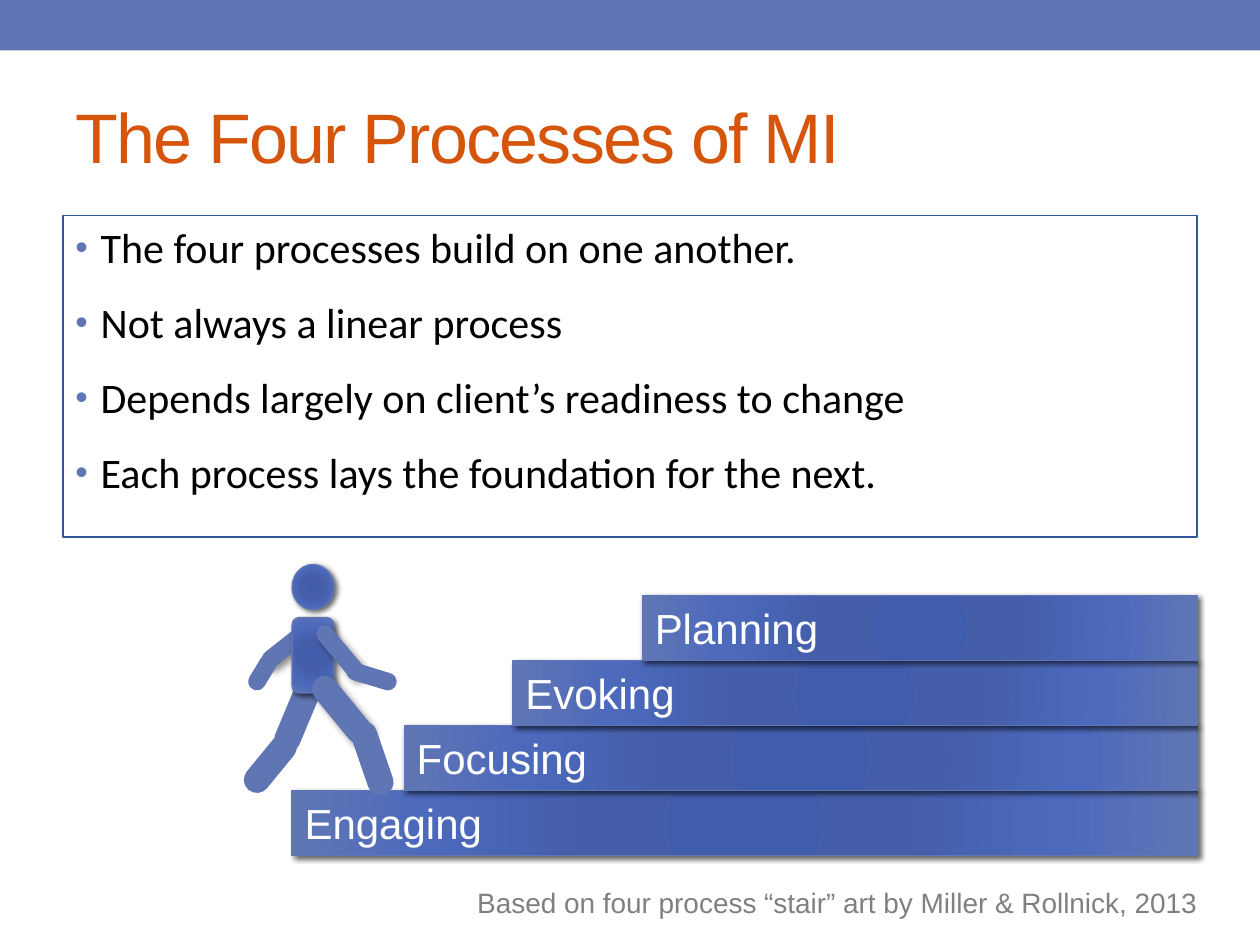
from lxml import etree
from pptx import Presentation
from pptx.dml.color import RGBColor
from pptx.enum import shapes, text
from pptx.oxml import parse_xml
from pptx.oxml.ns import qn
from pptx.util import Cm, Pt

COLORS = {
    "blue": "6076B4", "title": "D6550D", "border": "2F5897", "black": "000000",
    "white": "FFFFFF", "gray": "808080",
}
GRADIENT = {0: "405CAC", 34: "445EA9", 70: "4C69BC", 100: "6076B4"}
NAMESPACE = "http://schemas.openxmlformats.org/drawingml/2006/main"
SOFT_SHADOW = (60, 3, 2)
LIMB_SHADOW = (43, 4, 3)


class SlideBuilder:
    def __init__(self, slide):
        self.slide = slide

    def color(self, name):
        return RGBColor.from_string(COLORS[name])

    def add_shadow(self, effects, alpha, blur, distance):
        shadow = etree.SubElement(
            effects, qn("a:outerShdw"), blurRad=str(Pt(blur)), dist=str(Pt(distance)),
            dir="2700000", algn="tl", rotWithShape="0")
        shade = etree.SubElement(shadow, qn("a:srgbClr"), val=COLORS["black"])
        etree.SubElement(shade, qn("a:alpha"), val=str(alpha * 1000))

    def add_text(self, shape, lines, size, color, font="Arial", align=text.PP_ALIGN.LEFT,
                 anchor=text.MSO_ANCHOR.MIDDLE):
        frame = shape.text_frame
        frame.word_wrap = True
        frame.vertical_anchor = anchor
        frame.text = "\n".join(lines)
        for paragraph in frame.paragraphs:
            paragraph.alignment = align
            paragraph.font.size = Pt(size)
            paragraph.font.name = font
            paragraph.font.color.rgb = self.color(color)
        return frame

    def text_box(self, box, lines, size, color, **options):
        shape = self.slide.shapes.add_textbox(*map(Cm, box))
        self.add_text(shape, lines, size, color, **options)
        return shape

    def bar(self, box, color):
        shape = self.slide.shapes.add_shape(shapes.MSO_SHAPE.RECTANGLE, *map(Cm, box))
        shape.shadow.inherit = False
        shape.fill.solid()
        shape.fill.fore_color.rgb = self.color(color)
        shape.line.fill.background()

    def bullets(self, box, lines):
        shape = self.text_box(box, lines, 24, "black", font="Calibri",
                              anchor=text.MSO_ANCHOR.TOP)
        shape.line.color.rgb = self.color("border")
        shape.line.width = Pt(0.75)
        for paragraph in shape.text_frame.paragraphs:
            paragraph.space_before = Pt(4)
            paragraph.space_after = Pt(10)
            properties = paragraph._p.get_or_add_pPr()
            properties.set("marL", str(Cm(0.51)))
            properties.set("indent", str(Cm(-0.51)))
            bullet = parse_xml(
                f'<a:pPr xmlns:a="{NAMESPACE}"><a:buClr><a:srgbClr val="{COLORS["blue"]}"/>'
                '</a:buClr><a:buSzPct val="85000"/><a:buFont typeface="Arial"/>'
                '<a:buChar char="•"/></a:pPr>')
            position = properties.index(properties.find(qn("a:defRPr")))
            properties[position:position] = list(bullet)

    def glossy_shape(self, kind, box):
        shape = self.slide.shapes.add_shape(kind, *map(Cm, box))
        shape.line.color.rgb = self.color("blue")
        shape.line.width = Pt(0.75)
        shape.shadow.inherit = False
        shape.fill.background()
        properties = shape._element.spPr
        stops = "".join(f'<a:gs pos="{position * 1000}"><a:srgbClr val="{value}"/></a:gs>'
                        for position, value in GRADIENT.items())
        gradient = parse_xml(
            f'<a:gradFill xmlns:a="{NAMESPACE}" rotWithShape="1"><a:gsLst>{stops}</a:gsLst>'
            '<a:path path="circle"><a:fillToRect l="100000" t="100000" r="100000" b="100000"/>'
            '</a:path></a:gradFill>')
        properties.replace(properties.find(qn("a:noFill")), gradient)
        self.add_shadow(properties.find(qn("a:effectLst")), *SOFT_SHADOW)
        return shape

    def limb(self, points, width, shadow=None):
        connector = self.slide.shapes.add_connector(
            shapes.MSO_CONNECTOR.STRAIGHT, *map(Cm, points))
        connector.line.color.rgb = self.color("blue")
        connector.line.width = Pt(width)
        properties = connector._element.spPr
        properties.find(qn("a:ln")).set("cap", "rnd")
        effects = etree.SubElement(properties, qn("a:effectLst"))
        if shadow:
            self.add_shadow(effects, *shadow)


def main():
    presentation = Presentation()
    presentation.slide_width = Cm(25.4)
    presentation.slide_height = Cm(19.05)
    slide = presentation.slides.add_slide(presentation.slide_layouts[6])
    builder = SlideBuilder(slide)

    builder.bar((0, 0, 25.4, 1.02), "blue")
    title = builder.text_box((1.27, 1.37, 22.86, 2.74), ["The Four Processes of MI"], 40, "title")
    title.text_frame.paragraphs[0].runs[0].font._element.set("spc", "-100")
    builder.bullets((1.27, 4.35, 22.86, 6.48), [
        "The four processes build on one another.",
        "Not always a linear process",
        "Depends largely on client’s readiness to change",
        "Each process lays the foundation for the next.",
    ])

    stairs_right, bottom_step_top, rise = 24.13, 15.93, 1.31
    steps = [("Engaging", 5.89), ("Focusing", 8.15), ("Evoking", 10.34), ("Planning", 12.95)]
    for index, (name, left) in enumerate(steps):
        step = builder.glossy_shape(
            shapes.MSO_SHAPE.RECTANGLE,
            (left, bottom_step_top - index * rise, stairs_right - left, 1.32))
        builder.add_text(step, [name], 24, "white")

    builder.text_box((8.51, 17.73, 15.88, 0.94),
                     ["Based on four process “stair” art by Miller & Rollnick, 2013"],
                     16, "gray", align=text.PP_ALIGN.RIGHT, anchor=text.MSO_ANCHOR.TOP)

    arm, leg = 10, 15
    builder.limb((6.3, 13.69, 5.79, 14.91), leg)
    builder.limb((5.46, 13.28, 6.3, 12.62), arm, LIMB_SHADOW)
    builder.glossy_shape(shapes.MSO_SHAPE.OVAL, (5.89, 11.38, 0.84, 0.91))
    builder.glossy_shape(shapes.MSO_SHAPE.ROUNDED_RECTANGLE, (5.89, 12.45, 0.84, 1.52))
    builder.limb((6.55, 12.78, 7.16, 13.51), arm, LIMB_SHADOW)
    builder.limb((7.16, 13.54, 7.82, 13.74), arm)
    builder.limb((5.18, 13.74, 5.41, 13.36), arm)
    builder.limb((6.55, 13.89, 7.24, 14.73), leg, LIMB_SHADOW)
    builder.limb((7.34, 14.81, 7.67, 15.77), leg)
    builder.limb((5.72, 15.06, 5.18, 15.72), leg)

    presentation.save("out.pptx")


if __name__ == "__main__":
    main()
